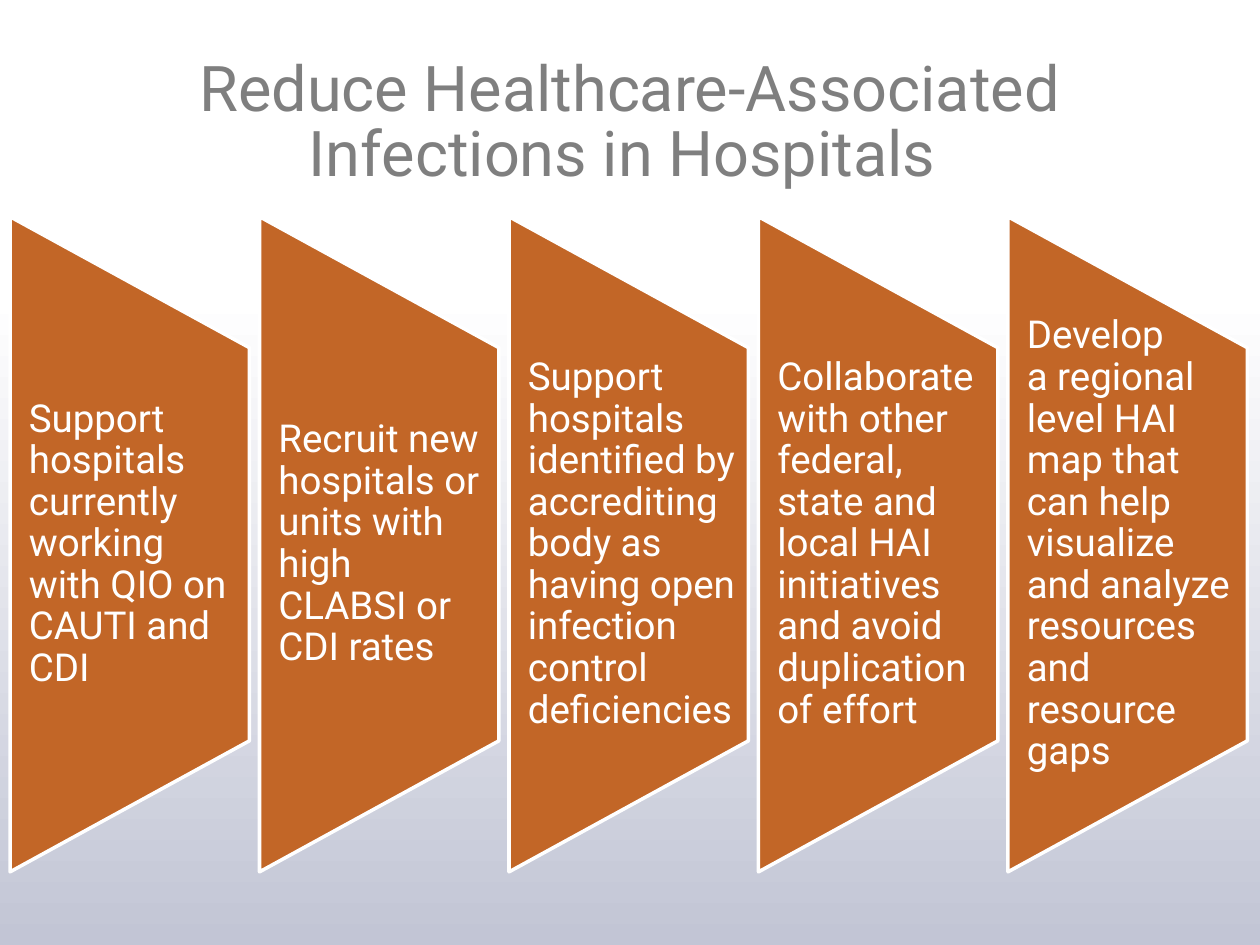
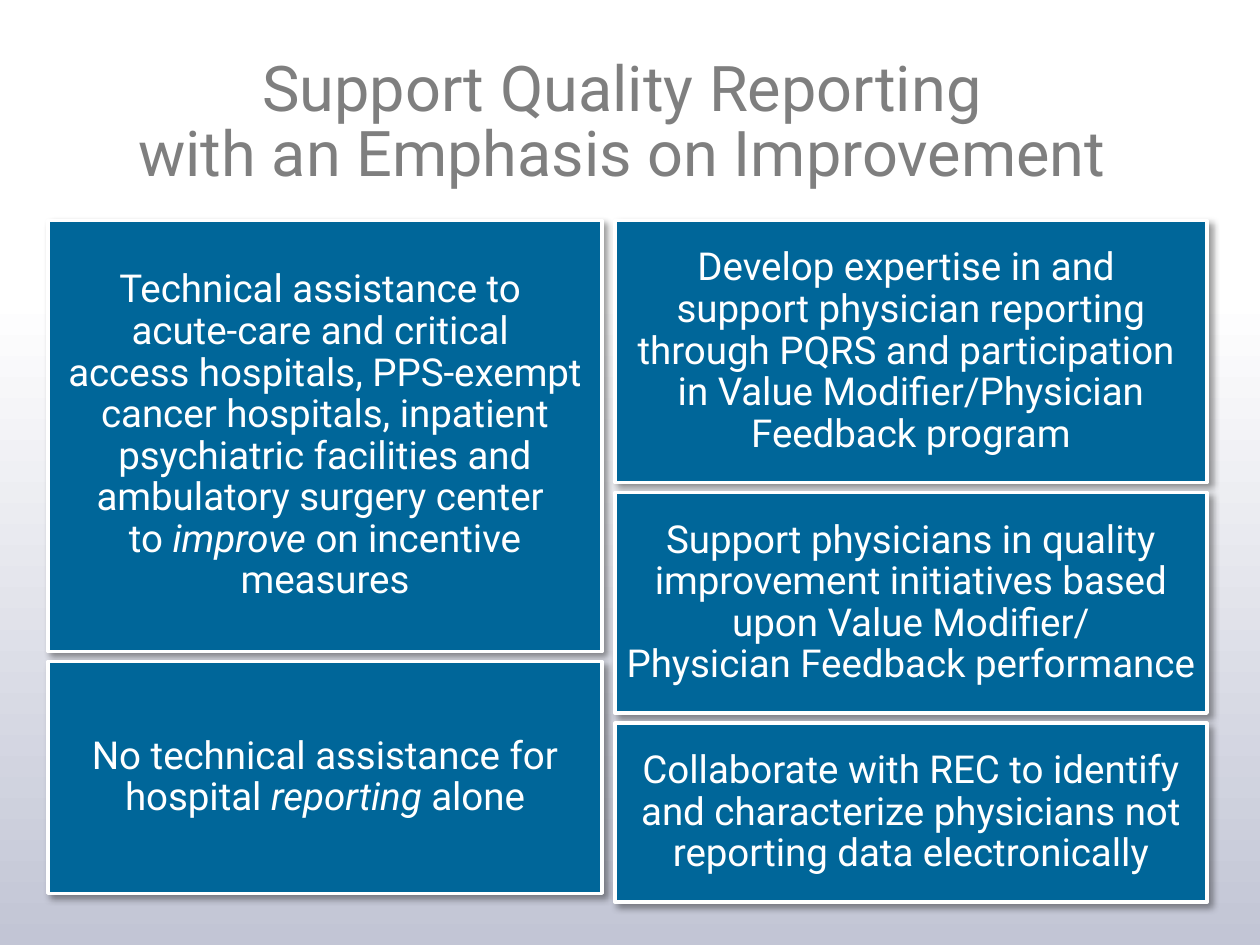
import pptx
import pptx.dml.color
import pptx.enum.shapes
import pptx.enum.text
import pptx.oxml
import pptx.oxml.ns
import pptx.util

PX = 9144
FONT = "Roboto"
COLORS = {
    "white": "FFFFFF",
    "haze": "C2C5D5",
    "title": "7F7F7F",
    "orange": "C26627",
    "blue": "006699",
    "shadow": "000000",
}

BANNER_LEFT, BANNER_TOP, BANNER_PITCH = 8, 172, 198
BANNER_WIDTH, BANNER_HEIGHT, BANNER_SLANT = 190, 520, 104
BANNERS = [
    "Support hospitals currently working \nwith QIO on CAUTI and CDI",
    "Recruit new hospitals or units with high CLABSI or CDI rates",
    "Support hospitals identified by accrediting body as having open "
    "infection control deficiencies",
    "Collaborate with other federal, \nstate and local HAI initiatives "
    "and avoid duplication of effort",
    "Develop \na regional\nlevel HAI map that can help visualize \n"
    "and analyze resources and \nresource gaps",
]

CARD_TOP, CARD_GAP = 175, 8
HOSPITAL_CARDS = [
    (342, "Technical assistance to \nacute-care and critical \n"
          "access hospitals, PPS-exempt cancer hospitals, inpatient psychiatric "
          "facilities and ambulatory surgery center \n"
          "to *improve* on incentive measures"),
    (184, "No technical assistance for hospital *reporting* alone"),
]
PHYSICIAN_CARDS = [
    (208, "Develop expertise in and \nsupport physician reporting through PQRS "
          "and participation \nin Value Modifier/Physician Feedback program"),
    (175, "Support physicians in quality improvement initiatives based upon "
          "Value Modifier/\nPhysician Feedback performance"),
    (142, "Collaborate with REC to identify and characterize physicians not "
          "reporting data electronically"),
]


def px(n):
    """Turn whole px into EMU."""
    return pptx.util.Emu(n * PX)


def rgb(name):
    """Look up a palette colour."""
    return pptx.dml.color.RGBColor.from_string(COLORS[name])


def write(sp, text, size, color, spacing, align, insets, anchor):
    """Fill a shape with one paragraph; asterisks enclose italics."""
    tf = sp.text_frame
    tf.word_wrap = True
    tf.vertical_anchor = anchor
    tf.margin_left, tf.margin_top, tf.margin_right, tf.margin_bottom = map(px, insets)
    p = tf.paragraphs[0]
    p.alignment = align
    p.line_spacing = spacing
    p.font.name = FONT
    p.font.size = pptx.util.Pt(size)
    p.font.color.rgb = rgb(color)
    for i, part in enumerate(text.split("*")):
        for j, line in enumerate(part.split("\n")):
            if j:
                p.add_line_break()
            r = p.add_run()
            r.text = line
            if i % 2:
                r.font.italic = True


def write_body(sp, text, align, insets):
    """Write the white body text of a banner or card."""
    write(sp, text, 22, "white", 0.9, align, insets,
          pptx.enum.text.MSO_ANCHOR.MIDDLE)


def paint(sp, color):
    """Give a shape its fill and white outline, without a shadow."""
    sp.shadow.inherit = False
    sp.fill.solid()
    sp.fill.fore_color.rgb = rgb(color)
    sp.line.color.rgb = rgb("white")
    sp.line.width = pptx.util.Pt(2)


def add_shadow(sp):
    """Add a soft shadow to the lower right."""
    effects = sp._element.spPr.find(pptx.oxml.ns.qn("a:effectLst"))
    effects.append(pptx.oxml.parse_xml(
        f'<a:outerShdw {pptx.oxml.ns.nsdecls("a")} blurRad="50800" dist="38100" '
        f'dir="2700000" algn="tl" rotWithShape="0"><a:srgbClr val="{COLORS["shadow"]}">'
        '<a:alpha val="40000"/></a:srgbClr></a:outerShdw>'))


def add_slide(prs, title, left, width):
    """Add a slide with the shared gradient and title style."""
    s = prs.slides.add_slide(prs.slide_layouts[6])
    fill = s.background.fill
    fill.gradient()
    fill.gradient_angle = 270
    for stop, position, color in zip(fill.gradient_stops, (0.31, 1), ("white", "haze")):
        stop.position = position
        stop.color.rgb = rgb(color)
    sp = s.shapes.add_textbox(px(left), px(42), px(width), px(125))
    write(sp, title, 36, "title", pptx.util.Pt(37), pptx.enum.text.PP_ALIGN.CENTER,
          (10, 5, 10, 5), pptx.enum.text.MSO_ANCHOR.TOP)
    return s


def add_banner(s, left, text):
    """Add an orange banner that narrows to the right."""
    right, bottom = left + BANNER_WIDTH, BANNER_TOP + BANNER_HEIGHT
    outline = s.shapes.build_freeform(left, bottom, scale=PX)
    outline.add_line_segments([
        (left, BANNER_TOP),
        (right, BANNER_TOP + BANNER_SLANT),
        (right, bottom - BANNER_SLANT),
    ], close=True)
    sp = outline.convert_to_shape()
    paint(sp, "orange")
    write_body(sp, text, pptx.enum.text.PP_ALIGN.LEFT,
               (15, BANNER_SLANT, 10, BANNER_SLANT))


def add_cards(s, left, width, cards):
    """Stack a column of blue cards."""
    top = CARD_TOP
    for height, text in cards:
        sp = s.shapes.add_shape(pptx.enum.shapes.MSO_SHAPE.RECTANGLE,
                                px(left), px(top), px(width), px(height))
        paint(sp, "blue")
        add_shadow(sp)
        write_body(sp, text, pptx.enum.text.PP_ALIGN.CENTER, (9, 9, 9, 9))
        top += height + CARD_GAP


def main():
    """Build both slides and save them."""
    prs = pptx.Presentation()
    prs.slide_width, prs.slide_height = px(1000), px(750)

    s = add_slide(prs, "Reduce Healthcare-Associated Infections in Hospitals ", 50, 900)
    for i, text in enumerate(BANNERS):
        add_banner(s, BANNER_LEFT + i * BANNER_PITCH, text)

    s = add_slide(prs, "Support Quality Reporting \nwith an Emphasis on Improvement ",
                  0, 1000)
    add_cards(s, 38, 440, HOSPITAL_CARDS)
    add_cards(s, 488, 470, PHYSICIAN_CARDS)

    prs.save("out.pptx")


if __name__ == "__main__":
    main()
